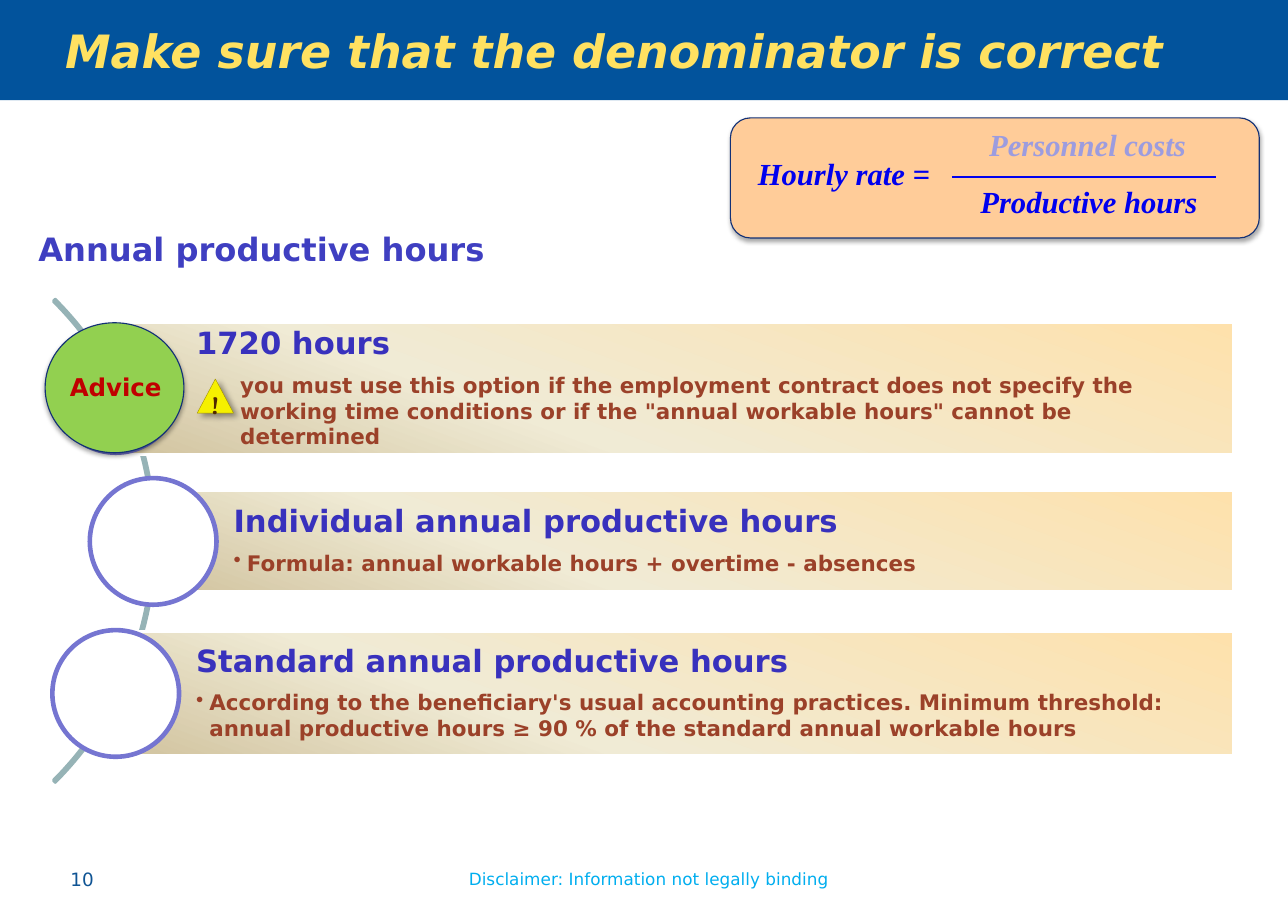
import pptx
import pptx.dml.color
import pptx.enum.shapes
import pptx.enum.text
import pptx.oxml
import pptx.oxml.ns
import pptx.util
from pptx.util import Inches

KIND = pptx.enum.shapes.MSO_SHAPE
ALIGN = pptx.enum.text.PP_ALIGN
MIDDLE = pptx.enum.text.MSO_ANCHOR.MIDDLE
NAMESPACE = pptx.oxml.ns.nsdecls("a")
SANS, SERIF = "DejaVu Sans", "Times New Roman"

deck = pptx.Presentation()
deck.slide_width, deck.slide_height = Inches(11.69), Inches(8.27)
page = deck.slides.add_slide(deck.slide_layouts[6])


def colour(target, value):
    """Give a font, line or fill one solid colour."""
    if hasattr(target, "solid"):
        target.solid()
        target.fore_color.rgb = pptx.dml.color.RGBColor.from_string(value)
    else:
        colour(target.fill, value)


def write(para, text, size, shade, bold=True, italic=False, font=SANS):
    span = para.add_run()
    span.text = text
    span.font.size, span.font.name = pptx.util.Pt(size), font
    span.font.bold, span.font.italic = bold, italic
    colour(span.font, shade)


# Title band
band = page.shapes.add_shape(KIND.RECTANGLE, Inches(-0.01), 0, Inches(11.72), Inches(0.91))
band.shadow.inherit = False
colour(band.fill, "02539C")
band.line.fill.background()
band.text_frame.margin_left = Inches(0.6)
band.text_frame.vertical_anchor = MIDDLE
band.text_frame.paragraphs[0].alignment = ALIGN.LEFT
write(band.text_frame.paragraphs[0], "Make sure that the denominator is correct", 30, "FFE161",
      italic=True)

# Arc behind the three options
arc = page.shapes.add_shape(KIND.BLOCK_ARC, Inches(-4.79), Inches(1.81), Inches(6.2), Inches(6.2))
arc.shadow.inherit = False
for index, value in enumerate((189, 27, 0.004)):
    arc.adjustments[index] = value
arc.fill.background()
colour(arc.line, "96B3B6")
arc.line.width = pptx.util.Pt(2)

# Options: left, top, height, circle top, heading, detail, bulleted
options = [
    (1.05, 2.93, 1.2, 2.96, "1720 hours",
     "you must use this option if the employment contract does not specify the working time "
     "conditions or if the \"annual workable hours\" cannot be determined", False),
    (1.39, 4.45, 0.92, 4.34, "Individual annual productive hours",
     "Formula: annual workable hours + overtime - absences", True),
    (1.05, 5.73, 1.13, 5.72, "Standard annual productive hours",
     "According to the beneficiary's usual accounting practices. Minimum threshold: annual "
     "productive hours ≥ 90 % of the standard annual workable hours", True),
]
stops = "".join(f'<a:gs pos="{position}000"><a:srgbClr val="{shade}"/></a:gs>'
                for position, shade in ((0, "FEE1AC"), (65, "F0EBD5"), (100, "D1C39F")))
gradient = (f'<a:gradFill {NAMESPACE} rotWithShape="1"><a:gsLst>{stops}</a:gsLst>'
            '<a:lin ang="6600000" scaled="0"/></a:gradFill>')
for left, top, height, circle_top, heading, detail, bulleted in options:
    bar = page.shapes.add_shape(KIND.RECTANGLE, Inches(left), Inches(top),
                                Inches(11.2 - left), Inches(height))
    bar.shadow.inherit = False
    bar._element.spPr.find(pptx.oxml.ns.qn("a:prstGeom")).addnext(pptx.oxml.parse_xml(gradient))
    colour(bar.line, "FFFFFF")
    bar.line.width = pptx.util.Pt(2)
    frame = bar.text_frame
    frame.vertical_anchor = MIDDLE
    frame.margin_left, frame.margin_right = Inches(0.73), Inches(0.3)
    frame.margin_top = frame.margin_bottom = Inches(0.06)
    para = frame.paragraphs[0]
    para.alignment, para.line_spacing = ALIGN.LEFT, 0.9
    para.space_after = pptx.util.Pt(7)
    write(para, heading, 20, "3831BD")
    para = frame.add_paragraph()
    para.alignment = ALIGN.LEFT
    properties = para._p.get_or_add_pPr()
    properties.set("marL", str(Inches(0.12 if bulleted else 0.4)))
    if bulleted:
        properties.set("indent", str(Inches(-0.12)))
        properties.append(pptx.oxml.parse_xml(f'<a:buChar {NAMESPACE} char="•"/>'))
    para.space_after = pptx.util.Pt(2 if bulleted else 5)
    write(para, detail, 14, "9B4129")

    circle = page.shapes.add_shape(KIND.OVAL, Inches(left - 0.575), Inches(circle_top),
                                   Inches(1.15), Inches(1.15))
    circle.shadow.inherit = False
    colour(circle.fill, "FFFFFF")
    colour(circle.line, "7575D1")
    circle.line.width = pptx.util.Pt(3)

# Raised shapes: kind, place, fill, line, line width, shadow blur, distance, angle, opacity
raised = [
    (KIND.ISOSCELES_TRIANGLE, (1.79, 3.44, 0.33, 0.31), "F6F000", "A09000", 0.25, 4, 3, 45, 40),
    (KIND.OVAL, (0.41, 2.93, 1.26, 1.18), "92D050", "133176", 0.75, 3.1, 1.8, 90, 35),
    (KIND.FLOWCHART_ALTERNATE_PROCESS, (6.63, 1.07, 4.8, 1.09), "FFCC99", "133176", 0.75,
     3.1, 1.8, 90, 35),
]
for kind, place, fill, line, width, blur, distance, angle, opacity in raised:
    shape = page.shapes.add_shape(kind, *map(Inches, place))
    colour(shape.fill, fill)
    colour(shape.line, line)
    shape.line.width = pptx.util.Pt(width)
    shape._element.spPr.append(pptx.oxml.parse_xml(
        f'<a:effectLst {NAMESPACE}><a:outerShdw blurRad="{pptx.util.Pt(blur)}" '
        f'dist="{pptx.util.Pt(distance)}" dir="{angle * 60000}" rotWithShape="0">'
        f'<a:srgbClr val="000000"><a:alpha val="{opacity * 1000}"/></a:srgbClr>'
        '</a:outerShdw></a:effectLst>'))
    if kind == KIND.ISOSCELES_TRIANGLE:
        frame = shape.text_frame
        frame.margin_left = frame.margin_right = frame.margin_top = frame.margin_bottom = 0
        frame.word_wrap = False
        frame.vertical_anchor = MIDDLE
        frame.paragraphs[0].alignment = ALIGN.CENTER
        write(frame.paragraphs[0], "!", 16, "502800", font="Cambria")

# Labels: place, text, size, colour, bold, italic, font, alignment
labels = [
    ((0.54, 7.83, 0.82, 0.3), "10", 12, "0F5494", False, False, SANS, ALIGN.LEFT),
    ((4.04, 7.84, 3.7, 0.29), "Disclaimer: Information not legally binding", 11, "00AEEF",
     False, False, SANS, ALIGN.CENTER),
    ((0.25, 2.03, 4.5, 0.45), "Annual productive hours", 21, "3F3FC1", True, False, SANS,
     ALIGN.LEFT),
    ((0.24, 3.33, 1.62, 0.37), "Advice", 16, "C00000", True, False, SANS, ALIGN.CENTER),
    ((6.78, 1.36, 1.9, 0.45), "Hourly rate =", 20, "0000EE", True, True, SERIF, ALIGN.LEFT),
    ((8.88, 1.09, 2.4, 0.44), "Personnel costs", 20, "9C9CDF", True, True, SERIF, ALIGN.LEFT),
    ((8.8, 1.61, 2.4, 0.44), "Productive hours", 20, "0000EE", True, True, SERIF, ALIGN.LEFT),
]
for place, text, size, shade, bold, italic, font, alignment in labels:
    box = page.shapes.add_textbox(*map(Inches, place))
    box.text_frame.word_wrap = True
    box.text_frame.paragraphs[0].alignment = alignment
    write(box.text_frame.paragraphs[0], text, size, shade, bold, italic, font)

fraction_line = page.shapes.add_connector(pptx.enum.shapes.MSO_CONNECTOR.STRAIGHT, Inches(8.64),
                                          Inches(1.61), Inches(11.04), Inches(1.61))
colour(fraction_line.line, "0000EE")
fraction_line.line.width = pptx.util.Pt(1.5)
fraction_line._element.spPr.append(pptx.oxml.parse_xml(f"<a:effectLst {NAMESPACE}/>"))

deck.save("out.pptx")
